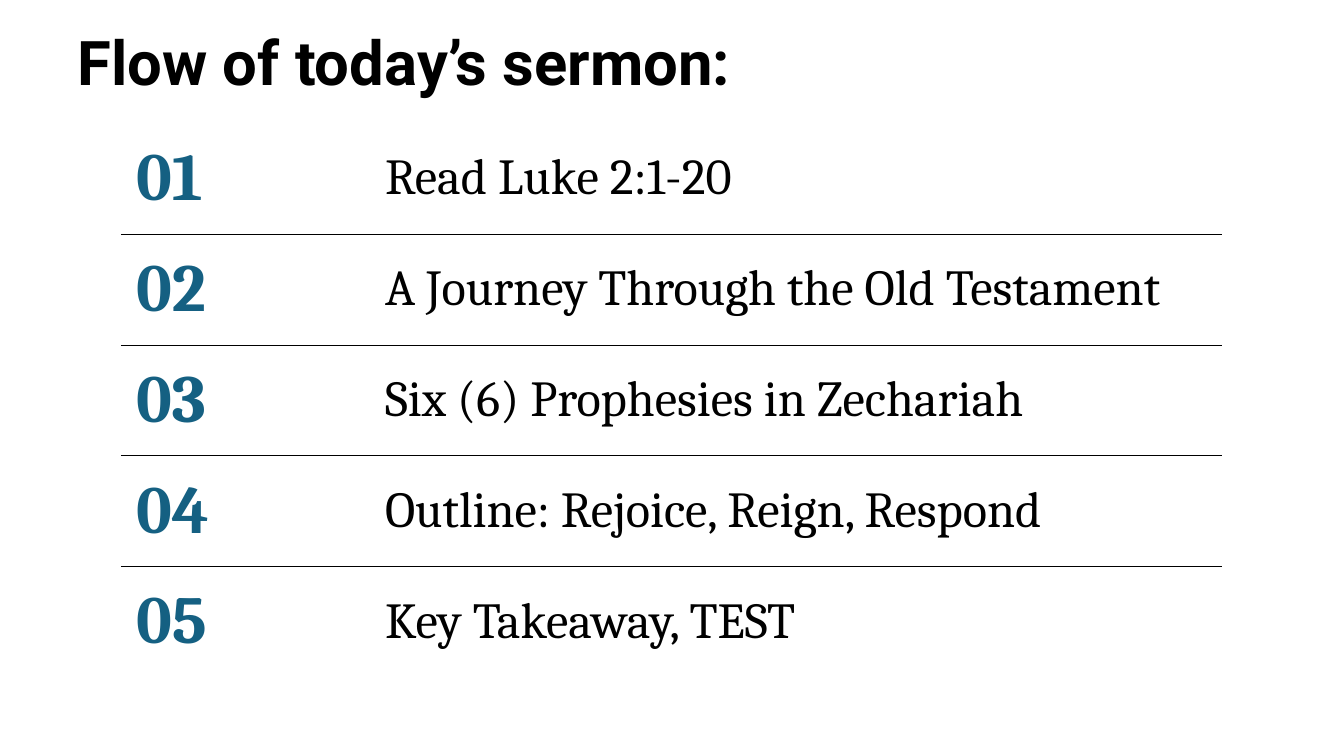
from lxml import etree
from pptx import Presentation
from pptx import util as u
from pptx.dml.color import RGBColor
from pptx.enum import text
from pptx.oxml import ns

BLACK = RGBColor(0x00, 0x00, 0x00)
TEAL = RGBColor(0x15, 0x60, 0x82)

HEADING = "Flow of today’s sermon:"
TOPICS = [
    "Read Luke 2:1-20",
    "A Journey Through the Old Testament",
    "Six (6) Prophesies in Zechariah",
    "Outline: Rejoice, Reign, Respond",
    "Key Takeaway, TEST",
]
COLUMN_WIDTHS = [177.84, 608.4]
ROW_HEIGHT = 77.4


def style_paragraph(para, font_name, size, color, bold):
    """Set the font of a whole paragraph."""
    font = para.font
    font.name, font.size, font.bold = font_name, u.Pt(size), bold
    font.color.rgb = color


def add_heading(page, words):
    """Place the slide heading in a text box."""
    box = page.shapes.add_textbox(u.Pt(48.24), u.Pt(19.44), u.Pt(861.84), u.Pt(89.28))
    frame = box.text_frame
    frame.word_wrap = True
    frame.vertical_anchor = text.MSO_ANCHOR.TOP
    para = frame.paragraphs[0]
    para.text = words
    para.line_spacing = 0.9
    style_paragraph(para, "Roboto", 44, BLACK, True)


def set_borders(cell, ruled_sides):
    """Draw thin black lines on the ruled sides and none on the others."""
    properties = cell._tc.get_or_add_tcPr()
    for side in "LRTB":
        line = etree.SubElement(properties, ns.qn(f"a:ln{side}"), w=str(u.Pt(0.5)))
        if side in ruled_sides:
            fill = etree.SubElement(line, ns.qn("a:solidFill"))
            etree.SubElement(fill, ns.qn("a:srgbClr"), val=str(BLACK))
        else:
            etree.SubElement(line, ns.qn("a:noFill"))


def fill_cell(cell, words, size, color, bold, ruled_sides):
    """Write one agenda cell with its margins and borders."""
    cell.margin_left = cell.margin_right = u.Pt(10.8)
    cell.margin_top = cell.margin_bottom = u.Pt(10.8)
    cell.vertical_anchor = text.MSO_ANCHOR.MIDDLE
    set_borders(cell, ruled_sides)
    cell.fill.background()
    para = cell.text_frame.paragraphs[0]
    para.text = words
    style_paragraph(para, "Cambria", size, color, bold)


def add_agenda(page, topics):
    """Build the numbered agenda table with lines between its rows."""
    count = len(topics)
    table = page.shapes.add_table(
        count, 2, u.Pt(86.4), u.Pt(87.84), u.Pt(sum(COLUMN_WIDTHS)), u.Pt(ROW_HEIGHT * count)
    ).table
    table.first_row = table.horz_banding = False
    for column, width in zip(table.columns, COLUMN_WIDTHS):
        column.width = u.Pt(width)
    for index, topic in enumerate(topics):
        table.rows[index].height = u.Pt(ROW_HEIGHT)
        sides = ("T" if index > 0 else "") + ("B" if index < count - 1 else "")
        fill_cell(table.cell(index, 0), f"{index + 1:02}", 48, TEAL, True, sides)
        fill_cell(table.cell(index, 1), topic, 36, BLACK, False, sides)


def main():
    """Build and save the agenda slide."""
    deck = Presentation()
    deck.slide_width, deck.slide_height = u.Pt(960), u.Pt(540)
    page = deck.slides.add_slide(deck.slide_layouts[6])
    add_heading(page, HEADING)
    add_agenda(page, TOPICS)
    deck.save("out.pptx")


if __name__ == "__main__":
    main()
